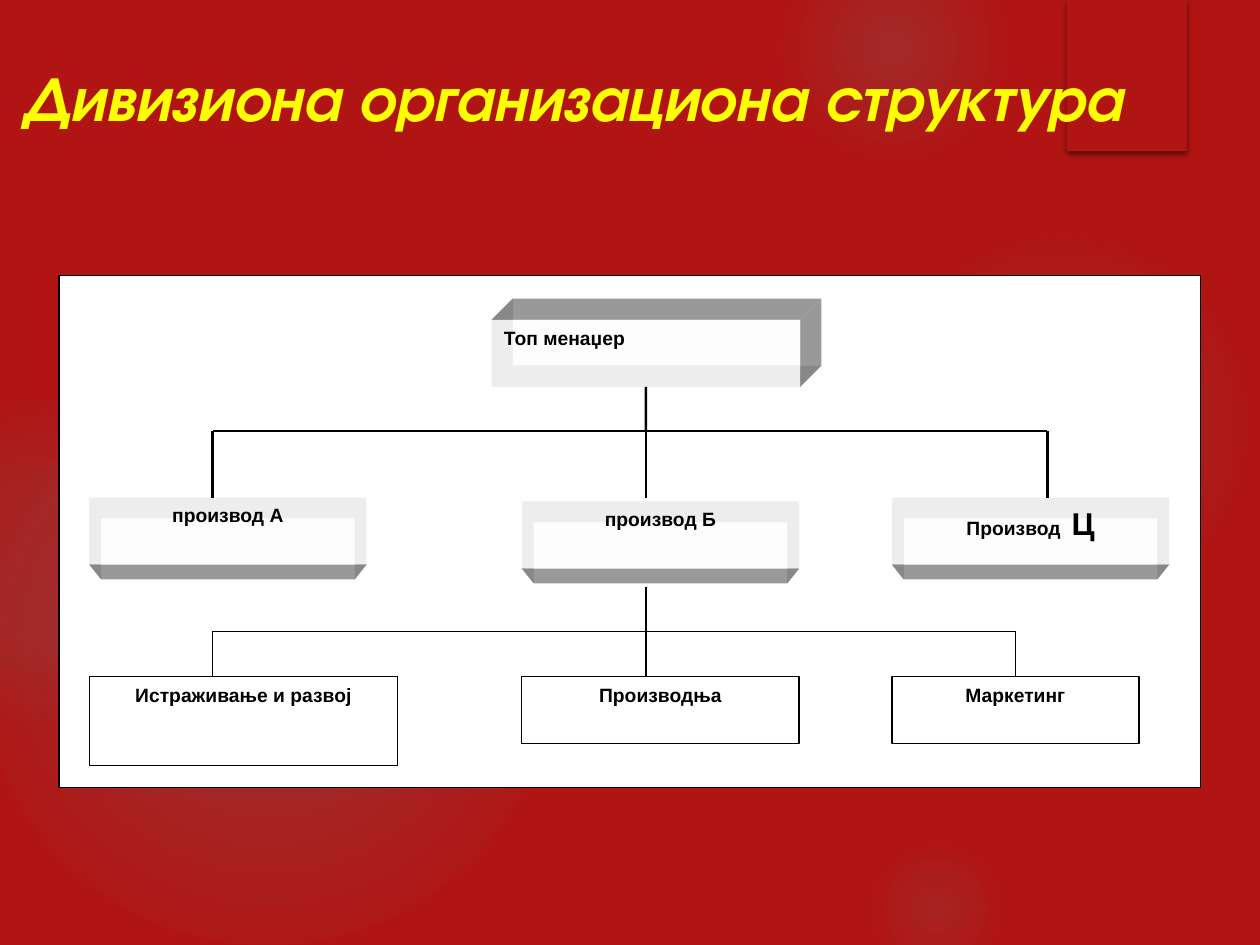
from lxml import etree
from pptx import Presentation
from pptx.dml.color import RGBColor
from pptx.enum.shapes import MSO_CONNECTOR, MSO_SHAPE
from pptx.enum.text import MSO_ANCHOR, PP_ALIGN
from pptx.oxml import parse_xml
from pptx.oxml.ns import nsdecls, qn
from pptx.util import Cm, Pt

RED = RGBColor(0xB0, 0x15, 0x13)
YELLOW = RGBColor(0xFF, 0xFF, 0x00)
BLACK = RGBColor(0x00, 0x00, 0x00)
WHITE = RGBColor(0xFF, 0xFF, 0xFF)
FACE = RGBColor(0xED, 0xED, 0xED)
FACE_LIGHT = RGBColor(0xFD, 0xFD, 0xFD)
SIDE = RGBColor(0x99, 0x99, 0x99)
SIDE_DARK = RGBColor(0x88, 0x88, 0x88)
GLOW = RGBColor(0x50, 0xB9, 0xC1)

RECTANGLE, OVAL = MSO_SHAPE.RECTANGLE, MSO_SHAPE.OVAL
STRAIGHT = MSO_CONNECTOR.STRAIGHT
TOP, MIDDLE = MSO_ANCHOR.TOP, MSO_ANCHOR.MIDDLE
LEFT, CENTER = PP_ALIGN.LEFT, PP_ALIGN.CENTER
SITE_TOP, SITE_BOTTOM = 0, 2
TITLE_ONLY = 5

# Left, top, diameter (cm), then the gradient stops as (position, opacity) in percent
GLOWS = [
    (17.5, 4.65, 7.82, [(0, 7), (36, 6), (69, 0)]),
    (15.8, -1.27, 4.45, [(0, 14), (36, 7), (73, 0)]),
    (17.5, 16.94, 2.74, [(0, 9), (36, 5), (66, 0)]),
    (-0.43, 7.42, 11.63, [(0, 11), (36, 10), (75, 0)]),
    (-2.34, 8.05, 6.55, [(0, 8), (36, 8), (72, 0)]),
]


def add_box(slide, left, top, width, height, fill=None, line_width=None, kind=RECTANGLE):
    shape = slide.shapes.add_shape(kind, Cm(left), Cm(top), Cm(width), Cm(height))
    shape.shadow.inherit = False
    if fill is None:
        shape.fill.background()
    else:
        shape.fill.solid()
        shape.fill.fore_color.rgb = fill
    if line_width is None:
        shape.line.fill.background()
    else:
        shape.line.color.rgb = BLACK
        shape.line.width = Pt(line_width)
    return shape


def add_polygon(slide, points, fill):
    corners = [(Cm(x), Cm(y)) for x, y in points]
    builder = slide.shapes.build_freeform(*corners[0], scale=1.0)
    builder.add_line_segments(corners[1:], close=True)
    shape = builder.convert_to_shape()
    shape.shadow.inherit = False
    shape.fill.solid()
    shape.fill.fore_color.rgb = fill
    shape.line.fill.background()


def add_line(slide, start, end, width):
    line = slide.shapes.add_connector(STRAIGHT, *(Cm(value) for value in start + end))
    line.line.color.rgb = BLACK
    line.line.width = Pt(width)
    etree.SubElement(line._element.spPr, qn("a:effectLst"))
    return line


def write_label(shape, runs, alignment=CENTER):
    frame = shape.text_frame
    frame.word_wrap = True
    frame.vertical_anchor = TOP
    paragraph = frame.paragraphs[0]
    paragraph.alignment = alignment
    for text, size in runs:
        run = paragraph.add_run()
        run.text = text
        run.font.name = "Arial"
        run.font.size = Pt(size)
        run.font.bold = True
        run.font.color.rgb = BLACK


def add_solid_block(slide, front, back, runs, alignment=CENTER):
    """Front and back are (left, top, right, bottom); the back shows through the front."""
    fl, ft, fr, fb = front
    bl, bt, br, bb = back
    if bt < ft:  # seen from above and the right
        sides = [[(fl, ft), (bl, bt), (br, bt), (fr, ft)],
                 [(fr, ft), (br, bt), (br, bb), (fr, fb)]]
        corners = [[(fl, ft), (bl, bt), (bl, ft)], [(fr, fb), (fr, bb), (br, bb)]]
    else:  # seen from below
        sides = [[(fl, fb), (fr, fb), (br, bb), (bl, bb)]]
        corners = [[(fl, fb), (bl, fb), (bl, bb)], [(fr, fb), (br, fb), (br, bb)]]
    for points in sides:
        add_polygon(slide, points, SIDE)
    for points in corners:
        add_polygon(slide, points, SIDE_DARK)
    add_box(slide, fl, ft, fr - fl, fb - ft, FACE)
    left, top, right, bottom = max(fl, bl), max(ft, bt), min(fr, br), min(fb, bb)
    add_box(slide, left, top, right - left, bottom - top, FACE_LIGHT)
    label = add_box(slide, fl, ft, fr - fl, fb - ft)
    write_label(label, runs, alignment)
    return label


def add_background(slide):
    slide.background.fill.solid()
    slide.background.fill.fore_color.rgb = RED
    # Soft round glows
    for left, top, diameter, stops in GLOWS:
        glow = add_box(slide, left, top, diameter, diameter, GLOW, kind=OVAL)
        stop_xml = "".join(
            f'<a:gs pos="{position * 1000}"><a:srgbClr val="{GLOW}">'
            f'<a:alpha val="{opacity * 1000}"/></a:srgbClr></a:gs>'
            for position, opacity in stops)
        gradient = parse_xml(
            f'<a:gradFill {nsdecls("a")}><a:gsLst>{stop_xml}</a:gsLst><a:path path="circle">'
            '<a:fillToRect l="50000" t="50000" r="50000" b="50000"/></a:path></a:gradFill>')
        properties = glow._element.spPr
        properties.replace(properties.find(qn("a:solidFill")), gradient)
    # Bookmark with a shadow
    bookmark = add_box(slide, 21.51, 0, 2.42, 3.05, RED)
    effects = bookmark._element.spPr.find(qn("a:effectLst"))
    effects.append(parse_xml(
        f'<a:outerShdw {nsdecls("a")} blurRad="{Pt(3)}" dist="{Pt(2)}" dir="5400000">'
        '<a:srgbClr val="000000"><a:alpha val="45000"/></a:srgbClr></a:outerShdw>'))


def add_title(slide, left, top, width, height):
    title = slide.shapes.title
    title.left, title.top, title.width, title.height = map(Cm, (left, top, width, height))
    # Bring the title in front of the background
    slide.shapes._spTree.append(title._element)
    title.text_frame.word_wrap = True
    title.text_frame.vertical_anchor = MIDDLE
    paragraph = title.text_frame.paragraphs[0]
    paragraph.alignment = LEFT
    run = paragraph.add_run()
    run.text = "Дивизиона организациона структура"
    run.font.name = "TeX Gyre Adventor"
    run.font.size = Pt(36)
    run.font.bold = True
    run.font.italic = True
    run.font.color.rgb = YELLOW


def add_organisation_chart(slide, left, top, width, height):
    add_box(slide, left, top, width, height, WHITE, 0.75)
    columns = [left + offset for offset in (0.61, 9.33, 16.79)]
    box_height = 1.35

    # Top manager
    x, y, depth = left + 8.72, top + 0.89, 0.43
    front = (x, y, x + 6.22, y + box_height)
    back = (x + depth, y - depth, x + 6.22 + depth, y + box_height - depth)
    manager = add_solid_block(slide, front, back, [("Топ менаџер", 11)], LEFT)

    # Products
    products = [(4.47, [("производ А", 11)]), (4.55, [("производ Б", 11)]),
                (4.47, [("Производ  ", 11), ("Ц", 18)])]
    for x, (offset, runs) in zip(columns, products):
        y = top + offset
        front = (x, y, x + 5.59, y + box_height)
        back = (x + 0.24, y + 0.42, x + 5.35, y + box_height + 0.3)
        add_solid_block(slide, front, back, runs)

    # Departments
    department_top = top + 8.08
    departments = [("Истраживање и развој", 6.22, 1.8), ("Производња", 5.59, box_height),
                   ("Маркетинг", 4.98, box_height)]
    boxes = []
    for x, (text, box_width, department_height) in zip(columns, departments):
        box = add_box(slide, x, department_top, box_width, department_height, WHITE, 0.75)
        write_label(box, [(text, 11)])
        boxes.append(box)

    # Two trees of lines: trunk top, bar, branch ends, right end, line width
    first, middle = left + 3.1, left + 11.83
    trees = [(2.24, 3.13, 4.47, 19.92, 1.5, manager, None),
             (6.28, 7.17, 8.08, 19.28, 0.75, None, boxes[-1])]
    for start, bar, end, right, line_width, parent, last_child in trees:
        start, bar, end, right = top + start, top + bar, top + end, left + right
        trunk = add_line(slide, (middle, start), (middle, bar), line_width)
        if parent is not None:
            trunk.begin_connect(parent, SITE_BOTTOM)
        add_line(slide, (first, bar), (right, bar), line_width)
        for x in (first, middle, right):
            branch = add_line(slide, (x, bar), (x, end), line_width)
        if last_child is not None:
            branch.end_connect(last_child, SITE_TOP)


def main():
    presentation = Presentation()
    presentation.slide_width, presentation.slide_height = Cm(25.4), Cm(19.05)
    slide = presentation.slides.add_slide(presentation.slide_layouts[TITLE_ONLY])
    add_background(slide)
    add_title(slide, 0.2, 0.74, 25, 2.41)
    add_organisation_chart(slide, 1.19, 5.56, 23.01, 10.31)
    presentation.save("out.pptx")


if __name__ == "__main__":
    main()
